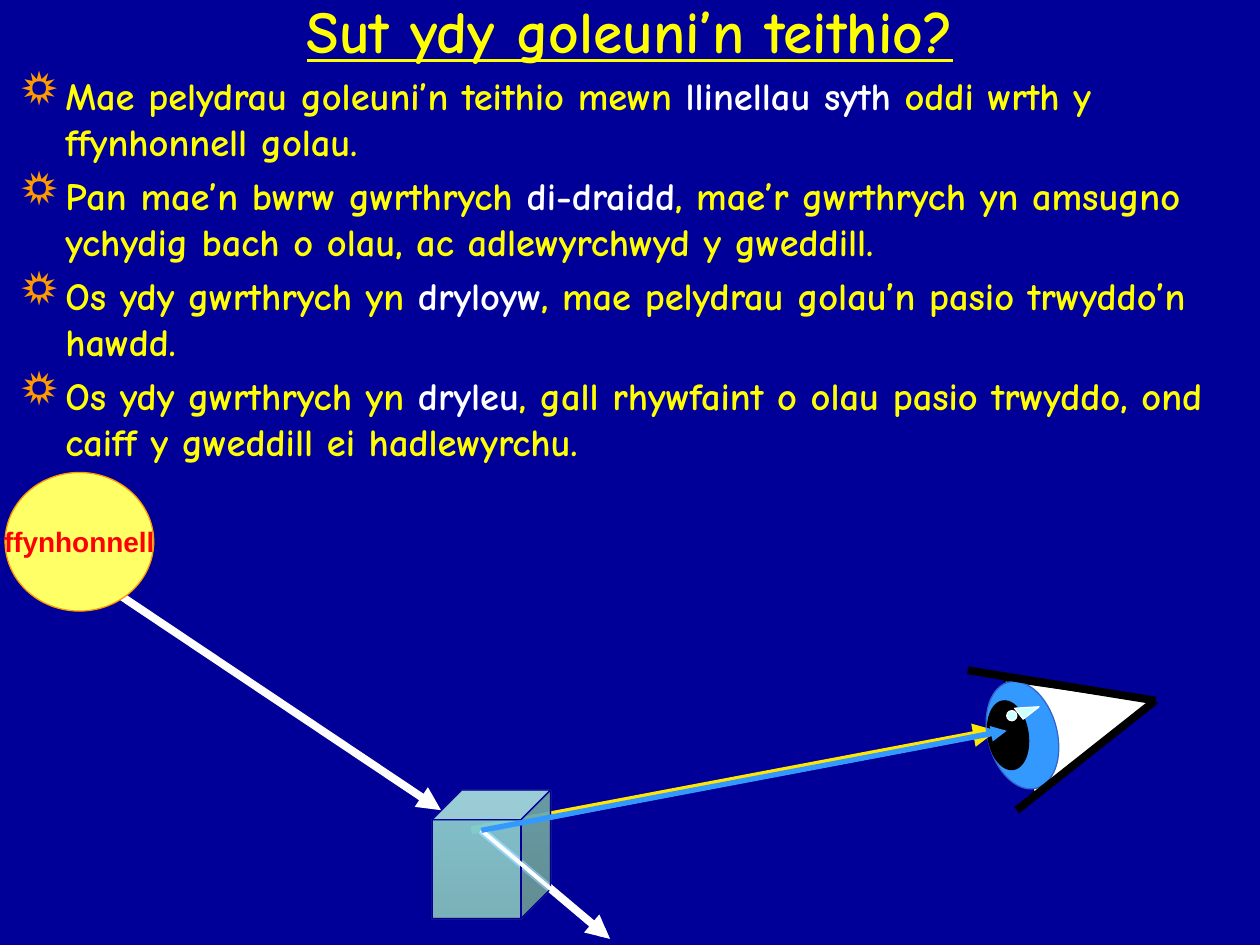
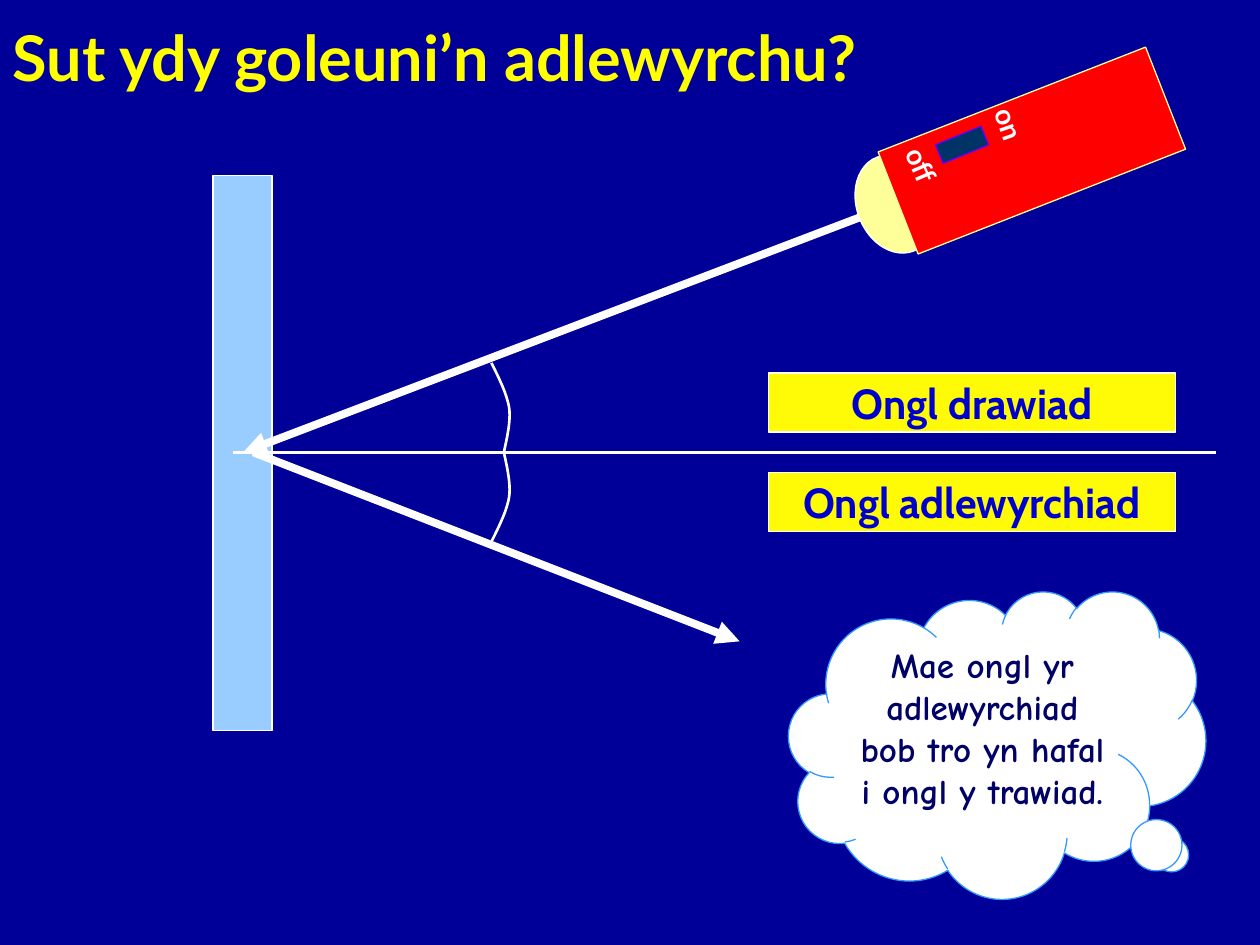
from lxml.etree import SubElement
from pptx import Presentation
from pptx.dml.color import RGBColor
from pptx.enum.shapes import MSO_CONNECTOR as Connector, MSO_SHAPE as Shape
from pptx.enum.text import MSO_ANCHOR as Anchor, MSO_AUTO_SIZE as AutoSize, PP_ALIGN as Align
from pptx.oxml.ns import qn
from pptx.util import Inches, Pt

COLORS = {
    "navy": "000099", "yellow": "FFFF00", "white": "FFFFFF", "black": "000000",
    "orange": "FF9900", "gold": "FFE701", "blue": "3399FF", "iris edge": "3366CC",
    "glint": "CCFFFF", "sky": "66CCFF", "sky mid": "62C5F6", "sky deep": "5BB5E2",
    "sun": "FFFF66", "red": "FF0000", "mirror": "99CCFF", "label": "FFFA06",
    "label text": "0000CC", "thought": "000066", "lens": "FFFF99",
    "switch": "003366", "switch edge": "6600FF",
}
TITLE = {"size": Pt(34), "name": "Comic Neue", "bold": True, "underline": True}
PLAIN_TITLE = {"size": Pt(36), "name": "Lato", "bold": True}
BODY = {"size": Pt(22), "name": "Comic Neue", "bold": True}
SOURCE = {"size": Pt(16), "name": "Arial", "bold": True}
SWITCH = {"size": Pt(16), "name": "Lato", "bold": True}
ANGLE = {"size": Pt(24), "name": "Cabin", "bold": True}
THOUGHT = {"size": Pt(20), "name": "Comic Neue", "bold": True}

BULLETS = [
    ("Mae pelydrau goleuni’n teithio mewn ", "llinellau syth",
     " oddi wrth y ffynhonnell golau."),
    ("Pan mae’n bwrw gwrthrych ", "di-draidd",
     ", mae’r gwrthrych yn amsugno ychydig bach o olau, ac adlewyrchwyd y gweddill."),
    ("Os ydy gwrthrych yn ", "dryloyw",
     ", mae pelydrau golau’n pasio trwyddo’n hawdd."),
    ("Os ydy gwrthrych yn ", "dryleu",
     ", gall rhywfaint o olau pasio trwyddo, ond caiff y gweddill ei hadlewyrchu."),
]


def rgb(color):
    return RGBColor.from_string(COLORS[color])


def inches(values):
    return [Inches(value) for value in values]


def add_run(paragraph, text, look, color):
    run = paragraph.add_run()
    run.text = text
    for key, value in look.items():
        setattr(run.font, key, value)
    run.font.color.rgb = rgb(color)


def write(shape, text, look, color, align=Align.CENTER, **frame_format):
    frame = shape.text_frame
    for key, value in frame_format.items():
        setattr(frame, key, value)
    paragraph = frame.paragraphs[0]
    paragraph.alignment = align
    add_run(paragraph, text, look, color)


def add_slide(prs, title, box, look, align):
    slide = prs.slides.add_slide(prs.slide_layouts[5])
    heading = slide.shapes.title
    heading.left, heading.top, heading.width, heading.height = inches(box)
    write(heading, title, look, "yellow", align, vertical_anchor=Anchor.MIDDLE,
          word_wrap=True, auto_size=AutoSize.NONE)
    return slide


def add_figure(shapes, kind, box, fill, edge, rotation=0, adjust=()):
    figure = shapes.add_shape(kind, *inches(box))
    figure.shadow.inherit = False
    figure.rotation = rotation
    for index, value in enumerate(adjust):
        figure.adjustments[index] = value
    figure.fill.solid()
    figure.fill.fore_color.rgb = rgb(fill)
    figure.line.color.rgb = rgb(edge)
    figure.line.width = Pt(0.75)
    return figure


def glaze(figure, top, bottom, opacity):
    figure.fill.gradient()
    figure.fill.gradient_angle = 270
    for stop, color, position in zip(figure.fill.gradient_stops, (top, bottom), (0, 1)):
        stop.color.rgb = rgb(color)
        stop.position = position
    for tint in figure.element.spPr.iter(qn("a:gs")):
        SubElement(tint[0], qn("a:alpha"), val=str(opacity * 1000))


def add_line(shapes, start, end, color, width, arrow=False):
    line = shapes.add_connector(Connector.STRAIGHT, *inches(start + end))
    line.line.color.rgb = rgb(color)
    line.line.width = Pt(width)
    properties = line.element.spPr
    if arrow:
        SubElement(properties.find(qn("a:ln")), qn("a:tailEnd"), type="triangle")
    SubElement(properties, qn("a:effectLst"))


def add_bullets(shapes, box):
    frame = shapes.add_textbox(*inches(box)).text_frame
    frame.word_wrap = True
    for index, parts in enumerate(BULLETS):
        paragraph = frame.add_paragraph() if index else frame.paragraphs[0]
        paragraph.space_before = Pt(4.4)
        for text, color in zip(parts, ("yellow", "white", "yellow")):
            add_run(paragraph, text, BODY, color)
        properties = paragraph._p.get_or_add_pPr()
        properties.set("marL", str(Inches(0.38)))
        properties.set("indent", str(Inches(-0.38)))
        bullet_color = SubElement(properties, qn("a:buClr"))
        SubElement(bullet_color, qn("a:srgbClr"), val=COLORS["orange"])
        SubElement(properties, qn("a:buSzPct"), val="130000")
        SubElement(properties, qn("a:buChar"), char="☼")


def curve_point(controls, t):
    weights = ((1 - t) ** 3, 3 * t * (1 - t) ** 2, 3 * t ** 2 * (1 - t), t ** 3)
    return tuple(sum(w * point[axis] for w, point in zip(weights, controls))
                 for axis in (0, 1))


def add_angle_arc(shapes, normal_y, side):
    curves = [
        [(3.9, 0.71), (3.96, 0.59), (4.02, 0.47), (4.04, 0.36)],
        [(4.04, 0.36), (4.06, 0.24), (4.01, 0.06), (4, 0)],
    ]
    points = [curve_point(curve, step / 12) for curve in curves for step in range(13)]
    outline = [inches((x, normal_y + side * rise)) for x, rise in points]
    builder = shapes.build_freeform(*outline[0])
    builder.add_line_segments(outline[1:], close=False)
    arc = builder.convert_to_shape()
    arc.shadow.inherit = False
    arc.fill.background()
    arc.line.color.rgb = rgb("white")
    arc.line.width = Pt(1.5)


def add_eye(shapes):
    add_figure(shapes, Shape.ISOSCELES_TRIANGLE, (8.16, 5.16, 0.94, 1.11),
               "white", "black", 75.2)
    add_figure(shapes, Shape.OVAL, (7.84, 5.4, 0.55, 0.87), "blue", "iris edge", 345.3)
    add_figure(shapes, Shape.OVAL, (7.84, 5.56, 0.32, 0.55), "black", "black", 351.2)
    add_figure(shapes, Shape.RIGHT_TRIANGLE, (8.07, 5.56, 0.16, 0.11),
               "glint", "white", 322.1)
    for lid_end in ((7.68, 5.32), (8.07, 6.43)):
        add_line(shapes, (9.17, 5.56), lid_end, "black", 4.5)


def add_cube(shapes, edge):
    return add_figure(shapes, Shape.CUBE, (3.43, 6.27, 0.94, 1.02), "orange", edge,
                      adjust=[0.25])


def add_torch(shapes):
    torch = shapes.add_group_shape().shapes
    add_figure(torch, Shape.OVAL, (6.8, 1.22, 0.61, 0.8), "lens", "white", 338.6)
    add_figure(torch, Shape.RECTANGLE, (7.05, 0.76, 2.28, 0.87), "red", "lens", 338.6)
    add_figure(torch, Shape.RECTANGLE, (7.44, 1.07, 0.39, 0.16),
               "switch", "switch edge", 337.8)
    for text, left, top, rotation, wrap in (("on", 7.77, 0.82, 70.9, True),
                                            ("off", 7.07, 1.13, 66.7, False)):
        mark = torch.add_textbox(*inches((left, top, 0.49, 0.37)))
        mark.rotation = rotation
        write(mark, text, SWITCH, "white", Align.LEFT, word_wrap=wrap,
              auto_size=AutoSize.SHAPE_TO_FIT_TEXT)


def build_travel(prs):
    shapes = add_slide(prs, "Sut ydy goleuni’n teithio?", (0.5, -0.27, 9, 1.01),
                       TITLE, Align.CENTER).shapes
    inside, beyond, pupil = (3.82, 6.59), (4.84, 7.45), (7.91, 5.8)
    add_cube(shapes, "gold")
    add_eye(shapes)
    add_line(shapes, (0.9, 4.69), (3.5, 6.43), "white", 4.5, arrow=True)
    add_line(shapes, (3.74, 6.59), pupil, "gold", 4.5, arrow=True)
    add_figure(shapes, Shape.OVAL, (7.99, 5.64, 0.08, 0.08), "glint", "white")
    glaze(add_cube(shapes, "navy"), "sky", "sky mid", 40)
    add_line(shapes, inside, beyond, "white", 4.5, arrow=True)
    add_line(shapes, (3.9, 6.59), pupil, "blue", 1.5, arrow=True)
    glaze(add_cube(shapes, "navy"), "sky", "sky deep", 67)
    add_line(shapes, inside, beyond, "white", 2.25, arrow=True)
    add_line(shapes, inside, (7.99, 5.8), "blue", 3, arrow=True)
    sun = add_figure(shapes, Shape.OVAL, (0.04, 3.75, 1.18, 1.1), "sun", "orange")
    write(sun, "ffynhonnell", SOURCE, "red", vertical_anchor=Anchor.MIDDLE,
          word_wrap=False)
    add_bullets(shapes, (0.04, 0.52, 9.96, 2.76))


def build_reflection(prs):
    shapes = add_slide(prs, "Sut ydy goleuni’n adlewyrchu?", (0, -0.03, 7.2, 0.95),
                       PLAIN_TITLE, Align.LEFT).shapes
    normal_y = 3.59
    add_figure(shapes, Shape.RECTANGLE, (1.69, 1.39, 0.47, 4.41), "mirror", "white")
    add_line(shapes, (6.89, 1.7), (1.93, normal_y), "white", 4.5, arrow=True)
    add_line(shapes, (2.01, normal_y), (5.87, 5.09), "white", 4.5, arrow=True)
    add_line(shapes, (1.85, normal_y), (9.65, normal_y), "white", 1.5)
    for side in (1, -1):
        add_angle_arc(shapes, normal_y, side)
    for row, text in enumerate(("Ongl drawiad", "Ongl adlewyrchiad")):
        label = add_figure(shapes, Shape.RECTANGLE, (6.1, 2.96 + 0.79 * row, 3.23, 0.47),
                           "label", "white")
        write(label, text, ANGLE, "label text", vertical_anchor=Anchor.MIDDLE,
              word_wrap=False)
    cloud = add_figure(shapes, Shape.CLOUD_CALLOUT, (6.26, 4.69, 3.31, 2.44),
                       "white", "blue", adjust=[0.42, 0.36])
    write(cloud, "Mae ongl yr adlewyrchiad bob tro yn hafal i ongl y trawiad.",
          THOUGHT, "thought", vertical_anchor=Anchor.TOP, word_wrap=True)
    add_torch(shapes)


def main():
    prs = Presentation()
    prs.slide_width, prs.slide_height = Inches(10), Inches(7.5)
    backdrop = prs.slide_master.background.fill
    backdrop.solid()
    backdrop.fore_color.rgb = rgb("navy")
    build_travel(prs)
    build_reflection(prs)
    prs.save("out.pptx")


if __name__ == "__main__":
    main()
